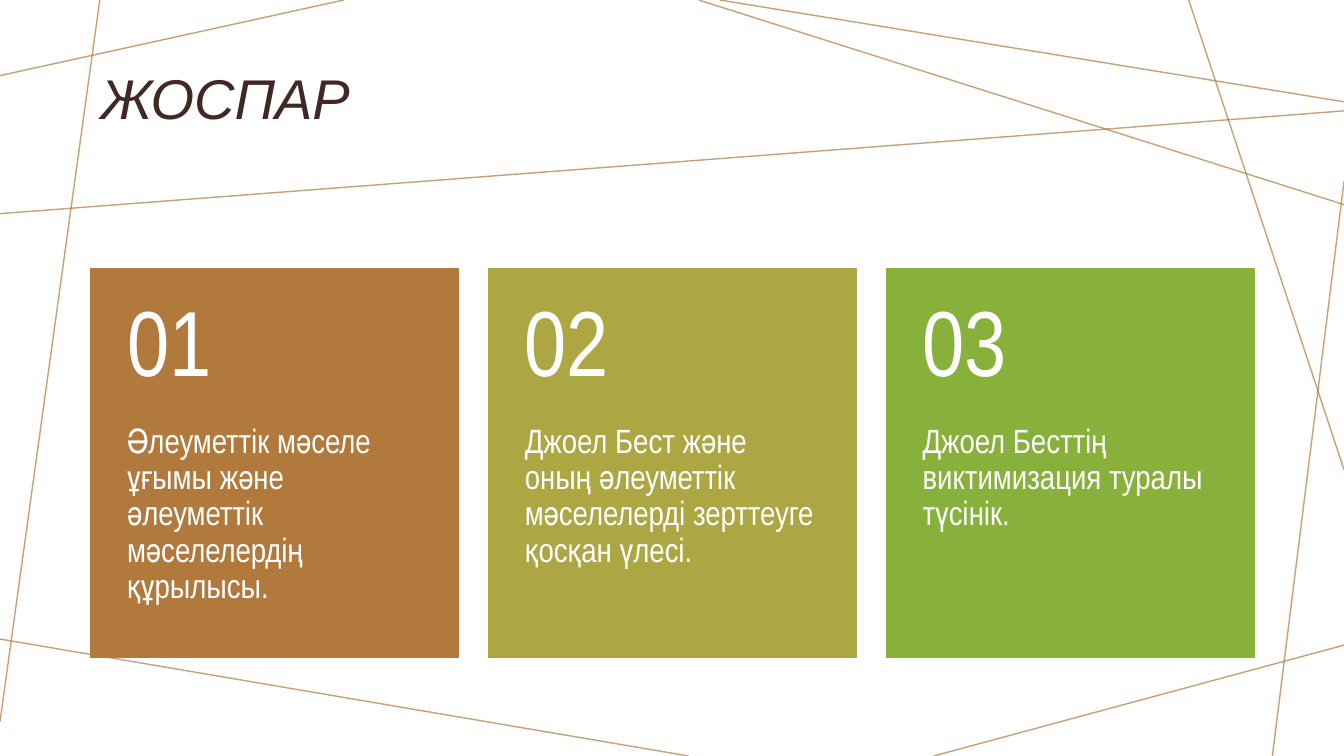
import pptx
import pptx.util
import pptx.dml.color
import pptx.enum.shapes
import pptx.enum.text
from lxml import etree
from pptx.util import Inches, Pt

RGBColor = pptx.dml.color.RGBColor
MSO_ANCHOR = pptx.enum.text.MSO_ANCHOR

BROWN = RGBColor(0xB1, 0x79, 0x3B)
OLIVE = RGBColor(0xAC, 0xA6, 0x43)
GREEN = RGBColor(0x87, 0xB1, 0x3B)
DARK = RGBColor(0x41, 0x28, 0x24)
WHITE = RGBColor(0xFF, 0xFF, 0xFF)

HEADING = "ЖОСПАР"
TOPICS = [
    ("01", "Әлеуметтік мәселе ұғымы және әлеуметтік мәселелердің құрылысы.", BROWN),
    ("02", "Джоел Бест және оның әлеуметтік мәселелерді зерттеуге қосқан үлесі.", OLIVE),
    ("03", "Джоел Бесттің виктимизация туралы түсінік.", GREEN),
]
# Decorative lines: (x1, y1, x2, y2) in inches
RAYS = [
    (3.41, 0, 0, 0.75),
    (0.99, 0, 0, 7.16),
    (6.83, 7.5, 0, 6.34),
    (13.33, 6.4, 9.26, 7.5),
    (13.33, 1.8, 12.62, 7.5),
    (13.33, 4.66, 11.79, 0),
    (13.33, 1.01, 7.14, 0),
    (6.93, 0, 13.33, 2.03),
    (0, 2.12, 13.33, 1.1),
]

CARD_LEFT, CARD_TOP = 0.9, 2.67
CARD_WIDTH, CARD_HEIGHT = 3.65, 3.85
CARD_STEP = 3.945
NUMBER_HEIGHT = 1.54

HEADING_FONT = {"name": "Arial", "size": Pt(40), "italic": True}
NUMBER_FONT = {"name": "Arial Narrow", "size": Pt(66)}
TOPIC_FONT = {"name": "Arial Narrow", "size": Pt(24)}


def add_ray(shapes, ends):
    """Draw a thin brown line at 70 % opacity, without shadow."""
    ray = shapes.add_connector(
        pptx.enum.shapes.MSO_CONNECTOR.STRAIGHT, *(Inches(end) for end in ends))
    ray.line.color.rgb = BROWN
    ray.line.width = Pt(1)
    properties = ray._element.spPr
    color = properties.find(".//" + pptx.oxml.ns.qn("a:srgbClr"))
    etree.SubElement(color, pptx.oxml.ns.qn("a:alpha"), val="70000")
    etree.SubElement(properties, pptx.oxml.ns.qn("a:effectLst"))


def add_text(shapes, box, words, font, color, anchor, insets):
    """Add a wrapped text box; insets are left, top, right, bottom."""
    frame = shapes.add_textbox(*(Inches(length) for length in box)).text_frame
    frame.word_wrap = True
    frame.vertical_anchor = anchor
    for side, inset in zip(("left", "top", "right", "bottom"), insets):
        setattr(frame, "margin_" + side, Inches(inset))
    paragraph = frame.paragraphs[0]
    paragraph.line_spacing = 0.9
    run = paragraph.add_run()
    run.text = words
    for attribute, value in font.items():
        setattr(run.font, attribute, value)
    run.font.color.rgb = color


def add_card(shapes, left, number, topic, color):
    card = shapes.add_shape(
        pptx.enum.shapes.MSO_SHAPE.RECTANGLE,
        Inches(left), Inches(CARD_TOP), Inches(CARD_WIDTH), Inches(CARD_HEIGHT))
    card.shadow.inherit = False
    card.fill.solid()
    card.fill.fore_color.rgb = color
    card.line.color.rgb = color
    card.line.width = Pt(1)
    add_text(shapes,
             (left, CARD_TOP + NUMBER_HEIGHT, CARD_WIDTH, CARD_HEIGHT - NUMBER_HEIGHT),
             topic, TOPIC_FONT, WHITE, MSO_ANCHOR.TOP, (0.36, 0, 0.36, 0.36))
    add_text(shapes, (left, CARD_TOP, CARD_WIDTH, NUMBER_HEIGHT),
             number, NUMBER_FONT, WHITE, MSO_ANCHOR.MIDDLE, (0.36, 0.18, 0.36, 0.18))


def main():
    deck = pptx.Presentation()
    deck.slide_width, deck.slide_height = Inches(13.33), Inches(7.5)
    slide = deck.slides.add_slide(deck.slide_layouts[6])
    for ends in RAYS:
        add_ray(slide.shapes, ends)
    add_text(slide.shapes, (0.9, 0.46, 9.03, 1.1), HEADING, HEADING_FONT, DARK,
             MSO_ANCHOR.MIDDLE, (0.1, 0.05, 0.1, 0.05))
    cards = slide.shapes.add_group_shape().shapes
    for index, (number, topic, color) in enumerate(TOPICS):
        add_card(cards, CARD_LEFT + index * CARD_STEP, number, topic, color)
    deck.save("out.pptx")


if __name__ == "__main__":
    main()
